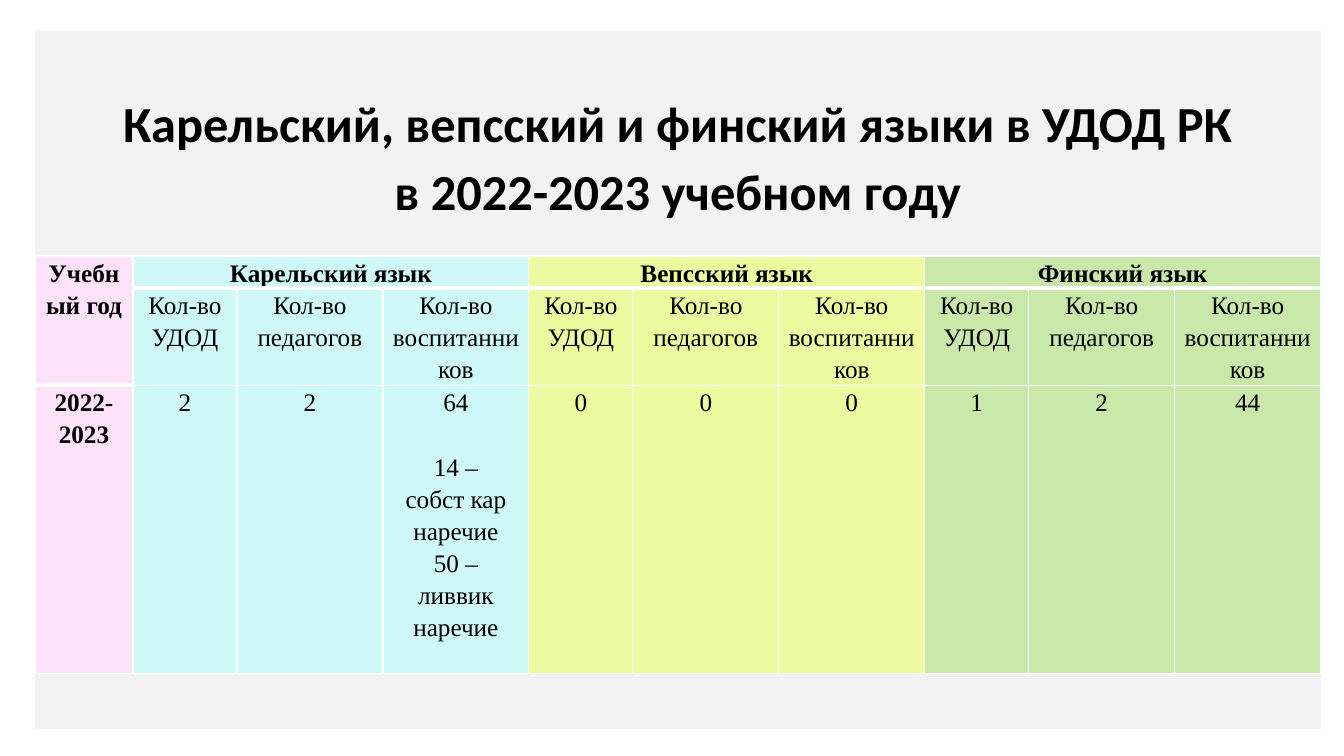
import pptx
import pptx.dml.color
import pptx.enum.shapes
import pptx.enum.text
import pptx.oxml
import pptx.oxml.ns
import pptx.util

EMU_PER_PX = 914400 / 100.8

BLACK = pptx.dml.color.RGBColor(0x00, 0x00, 0x00)
WHITE = pptx.dml.color.RGBColor(0xFF, 0xFF, 0xFF)
GREY = pptx.dml.color.RGBColor(0xF2, 0xF2, 0xF2)
PINK = pptx.dml.color.RGBColor(0xFE, 0xE2, 0xF9)
BLUE = pptx.dml.color.RGBColor(0xCF, 0xF8, 0xF9)
YELLOW = pptx.dml.color.RGBColor(0xEC, 0xFB, 0x9F)
GREEN = pptx.dml.color.RGBColor(0xCA, 0xE8, 0xAA)

LEFT, WIDTH = 35, 1286
YEAR_WIDTH = 98
MEASURE_WIDTHS = [104, 146, 146]
ROW_HEIGHTS = [32, 97, 288]
LINE_GAP = 23  # points, one text line

TITLE = "Карельский, вепсский и финский языки в УДОД РК\nв 2022-2023 учебном году"
MEASURES = ["Кол-во УДОД", "Кол-во педагогов", "Кол-во\nвоспитанников"]
KARELIAN_PUPILS = "64\n14 –\nсобст кар наречие\n50 –\nливвик наречие"
LANGUAGES = [
    ("Карельский язык", BLUE, ["2", "2", KARELIAN_PUPILS]),
    ("Вепсский язык", YELLOW, ["0", "0", "0"]),
    ("Финский язык", GREEN, ["1", "2", "44"]),
]


def px(length):
    return pptx.util.Emu(round(length * EMU_PER_PX))


def write_text(text_frame, text, font_name, size, bold, line_spacing):
    text_frame.text = text
    text_frame.word_wrap = True
    for paragraph in text_frame.paragraphs:
        paragraph.alignment = pptx.enum.text.PP_ALIGN.CENTER
        paragraph.line_spacing = line_spacing
        for run in paragraph.runs:
            run.font.name = font_name
            run.font.size = pptx.util.Pt(size)
            run.font.bold = bold
            run.font.color.rgb = BLACK


def add_title_panel(slide):
    panel = slide.shapes.add_shape(
        pptx.enum.shapes.MSO_SHAPE.RECTANGLE, px(LEFT), px(31), px(WIDTH), px(698))
    panel.shadow.inherit = False
    panel.fill.solid()
    panel.fill.fore_color.rgb = GREY
    panel.line.fill.background()
    text_frame = panel.text_frame
    write_text(text_frame, TITLE, "Calibri", 36, True, 0.9)
    text_frame.vertical_anchor = pptx.enum.text.MSO_ANCHOR.TOP
    text_frame.margin_top = px(68)
    text_frame.paragraphs[1].space_before = pptx.util.Pt(10)


def set_borders(cell, bottom_width):
    properties = cell._tc.get_or_add_tcPr()
    for side, width in (("L", 1), ("R", 1), ("T", 1), ("B", bottom_width)):
        properties.append(pptx.oxml.parse_xml(
            f'<a:ln{side} {pptx.oxml.ns.nsdecls("a")} w="{pptx.util.Pt(width)}">'
            f'<a:solidFill><a:srgbClr val="{WHITE}"/></a:solidFill></a:ln{side}>'))


def fill_cell(cell, text, color, bold=False):
    write_text(cell.text_frame, text, "Times New Roman", 18, bold, 1.15)
    cell.vertical_anchor = pptx.enum.text.MSO_ANCHOR.TOP
    cell.margin_left = cell.margin_right = px(7)
    cell.margin_top = cell.margin_bottom = 0
    cell.fill.solid()
    cell.fill.fore_color.rgb = color


def add_language_table(slide):
    widths = [YEAR_WIDTH] + MEASURE_WIDTHS * len(LANGUAGES)
    table = slide.shapes.add_table(
        len(ROW_HEIGHTS), len(widths), px(LEFT), px(256),
        px(WIDTH), px(sum(ROW_HEIGHTS))).table
    for column, width in zip(table.columns, widths):
        column.width = px(width)
    for row, height in zip(table.rows, ROW_HEIGHTS):
        row.height = px(height)
    for row_index in range(len(ROW_HEIGHTS)):
        for column_index in range(len(widths)):
            heavy = row_index == 0 or (row_index == 1 and column_index == 0)
            set_borders(table.cell(row_index, column_index), 3 if heavy else 1)

    # Year column
    table.cell(0, 0).merge(table.cell(1, 0))
    fill_cell(table.cell(0, 0), "Учебный год", PINK, bold=True)
    fill_cell(table.cell(2, 0), "2022-2023", PINK, bold=True)

    # One group of columns for each language
    for group, (language, color, values) in enumerate(LANGUAGES):
        first = 1 + group * len(MEASURES)
        table.cell(0, first).merge(table.cell(0, first + len(MEASURES) - 1))
        fill_cell(table.cell(0, first), language, color, bold=True)
        for offset, (measure, value) in enumerate(zip(MEASURES, values)):
            fill_cell(table.cell(1, first + offset), measure, color)
            value_cell = table.cell(2, first + offset)
            fill_cell(value_cell, value, color)
            paragraphs = value_cell.text_frame.paragraphs
            if len(paragraphs) > 1:
                paragraphs[0].space_after = pptx.util.Pt(LINE_GAP)


def main():
    presentation = pptx.Presentation()
    presentation.slide_width = px(1344)
    presentation.slide_height = px(756)
    slide = presentation.slides.add_slide(presentation.slide_layouts[6])
    add_title_panel(slide)
    add_language_table(slide)
    presentation.save("out.pptx")


if __name__ == "__main__":
    main()
